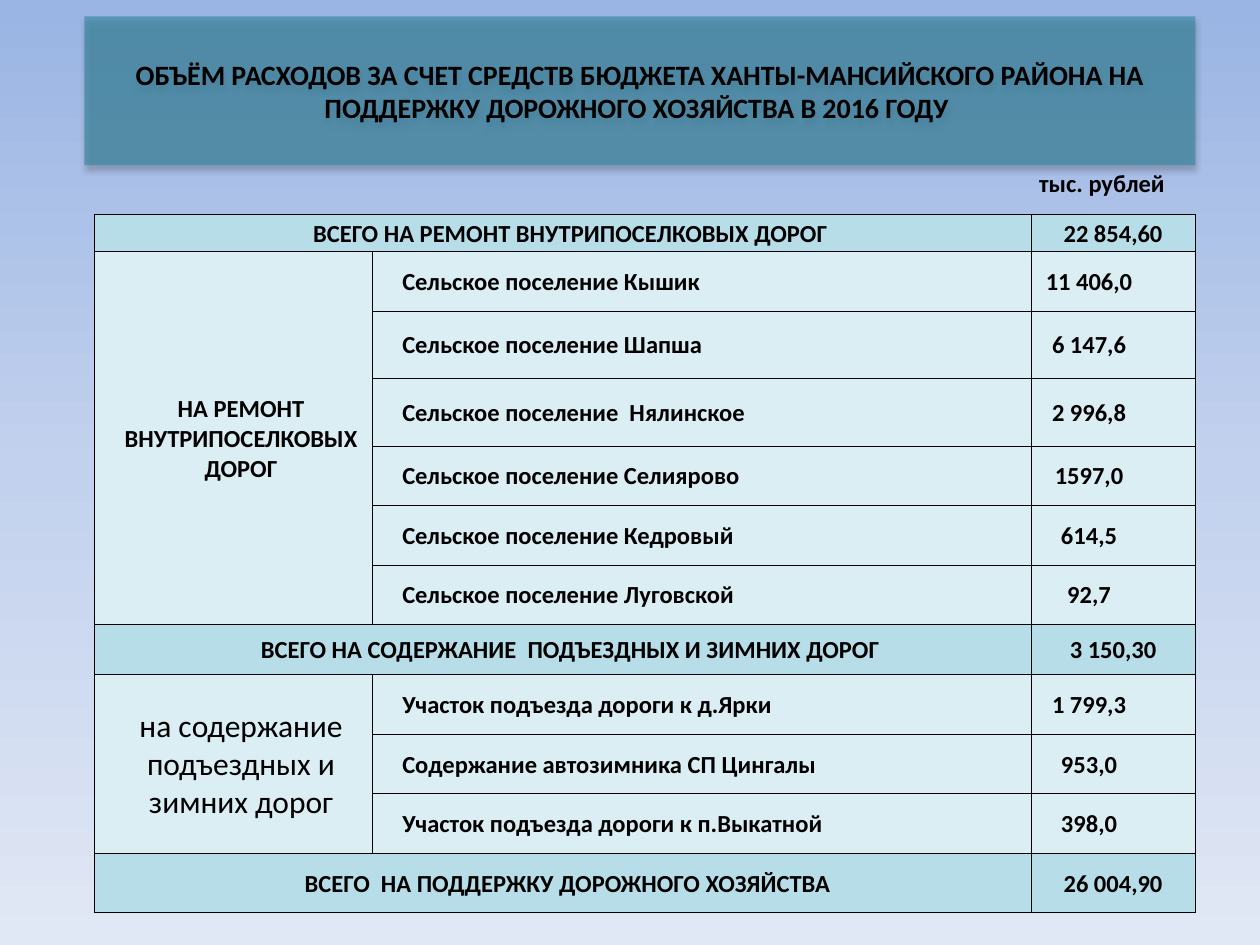
from copy import deepcopy

from lxml import etree
from pptx import Presentation
from pptx import util as u
from pptx.dml.color import RGBColor
from pptx.enum import shapes, text
from pptx.oxml.ns import qn

INK, TOTAL_FILL, ITEM_FILL = "000000", "B7DEE8", "DBEEF4"
COLUMN_WIDTHS = (5.6, 13.28, 3.3)
ROW_HEIGHTS = (0.75, 1.2, 1.36, 1.36, 1.2, 1.2, 1.2, 1.01, 1.2, 1.2, 1.2, 1.2)
LABEL_INSETS, TOTAL_INSETS, AMOUNT_INSETS = (0.6, 0.3), (0.03, 0.03), (0.03, 1)
SECTIONS = [
    ("ВСЕГО НА РЕМОНТ ВНУТРИПОСЕЛКОВЫХ ДОРОГ", "22 854,60",
     "НА РЕМОНТ ВНУТРИПОСЕЛКОВЫХ ДОРОГ", {}, [
         ("Сельское поселение Кышик", "11 406,0"),
         ("Сельское поселение Шапша", "6 147,6"),
         ("Сельское поселение  Нялинское", "2 996,8"),
         ("Сельское поселение Селиярово", "1597,0"),
         ("Сельское поселение Кедровый", "614,5"),
         ("Сельское поселение Луговской", "92,7")]),
    ("ВСЕГО НА СОДЕРЖАНИЕ  ПОДЪЕЗДНЫХ И ЗИМНИХ ДОРОГ", "3 150,30",
     "на содержание подъездных и зимних дорог", {"size": 18, "bold": False}, [
         ("Участок подъезда дороги к д.Ярки", "1 799,3"),
         ("Содержание автозимника СП Цингалы", "953,0"),
         ("Участок подъезда дороги к п.Выкатной", "398,0")]),
    ("ВСЕГО  НА ПОДДЕРЖКУ ДОРОЖНОГО ХОЗЯЙСТВА ", "26 004,90", None, {}, []),
]


def color(hex_code):
    return RGBColor.from_string(hex_code)


def write(frame, words, size=14, bold=True, align=text.PP_ALIGN.CENTER):
    paragraph = frame.paragraphs[0]
    paragraph.alignment = align
    run = paragraph.add_run()
    run.text = words
    run.font.name = "Calibri"
    run.font.size = u.Pt(size)
    run.font.bold = bold
    run.font.color.rgb = color(INK)


def paint_background(slide, stops):
    fill = slide.background.fill
    fill.gradient()
    fill.gradient_angle = 270
    stop_list = slide.background._cSld.find(".//" + qn("a:gsLst"))
    stop_list.append(deepcopy(stop_list[0]))
    for stop, (position, hex_code) in zip(fill.gradient_stops, stops):
        stop.position = position
        stop.color.rgb = color(hex_code)


def set_alpha(color_node, percent):
    etree.SubElement(color_node, qn("a:alpha"), val=str(percent * 1000))


def add_banner(slide, words):
    banner = slide.shapes.add_shape(
        shapes.MSO_SHAPE.RECTANGLE, u.Cm(1.7), u.Cm(0.33), u.Cm(22.4), u.Cm(3))
    banner.shadow.inherit = False
    banner.fill.solid()
    banner.fill.fore_color.rgb = color("31859C")
    banner.line.fill.background()
    properties = banner._element.spPr
    set_alpha(properties.find(qn("a:solidFill"))[0], 60)
    shadow = etree.SubElement(
        properties.find(qn("a:effectLst")), qn("a:outerShdw"),
        blurRad=str(u.Pt(3.5)), dist=str(u.Pt(2.2)), dir="5400000", rotWithShape="0")
    set_alpha(etree.SubElement(shadow, qn("a:srgbClr"), val=INK), 32)
    banner.text_frame.word_wrap = True
    banner.text_frame.vertical_anchor = text.MSO_ANCHOR.MIDDLE
    write(banner.text_frame, words, size=16)


def add_unit_note(slide, words):
    note = slide.shapes.add_textbox(u.Cm(20.7), u.Cm(3.27), u.Cm(3.4), u.Cm(0.86))
    note.text_frame.word_wrap = True
    write(note.text_frame, words, align=text.PP_ALIGN.LEFT)


def outline_cell(cell):
    properties = cell._tc.get_or_add_tcPr()
    for side in ("a:lnL", "a:lnR", "a:lnT", "a:lnB"):
        border = etree.SubElement(properties, qn(side), w=str(u.Pt(0.5)))
        ink = etree.SubElement(border, qn("a:solidFill"))
        etree.SubElement(ink, qn("a:srgbClr"), val=INK)


def fill_cell(cell, words, insets, background, **style):
    cell.margin_left, cell.margin_right = map(u.Cm, insets)
    cell.margin_top, cell.margin_bottom = u.Cm(0.03), 0
    cell.vertical_anchor = text.MSO_ANCHOR.MIDDLE
    cell.fill.solid()
    cell.fill.fore_color.rgb = color(background)
    write(cell.text_frame, words, **style)


def add_expense_table(slide):
    frame = slide.shapes.add_table(
        len(ROW_HEIGHTS), len(COLUMN_WIDTHS), u.Cm(1.91), u.Cm(4.32),
        u.Cm(sum(COLUMN_WIDTHS)), u.Cm(sum(ROW_HEIGHTS)))
    expenses = frame.table
    expenses.first_row = expenses.horz_banding = False
    for column, width in zip(expenses.columns, COLUMN_WIDTHS):
        column.width = u.Cm(width)
    for row, height in zip(expenses.rows, ROW_HEIGHTS):
        row.height = u.Cm(height)
    for cell in expenses.iter_cells():
        outline_cell(cell)

    row = 0
    for total, total_amount, group, group_style, items in SECTIONS:
        expenses.cell(row, 0).merge(expenses.cell(row, 1))
        fill_cell(expenses.cell(row, 0), total, LABEL_INSETS, TOTAL_FILL)
        fill_cell(expenses.cell(row, 2), total_amount, TOTAL_INSETS, TOTAL_FILL)
        row += 1
        if items:
            expenses.cell(row, 0).merge(expenses.cell(row + len(items) - 1, 0))
            fill_cell(expenses.cell(row, 0), group, LABEL_INSETS, ITEM_FILL, **group_style)
        for item, amount in items:
            fill_cell(expenses.cell(row, 1), item, LABEL_INSETS, ITEM_FILL,
                      align=text.PP_ALIGN.LEFT)
            fill_cell(expenses.cell(row, 2), amount, AMOUNT_INSETS, ITEM_FILL)
            row += 1


def main():
    deck = Presentation()
    deck.slide_width, deck.slide_height = u.Cm(25.4), u.Cm(19.05)
    slide = deck.slides.add_slide(deck.slide_layouts[6])
    paint_background(slide, [(0, "9AB5E4"), (0.5, "C2D1ED"), (1, "E1E8F5")])
    add_expense_table(slide)
    add_banner(slide, "ОБЪЁМ РАСХОДОВ ЗА СЧЕТ СРЕДСТВ БЮДЖЕТА ХАНТЫ-МАНСИЙСКОГО РАЙОНА "
                      "НА ПОДДЕРЖКУ ДОРОЖНОГО ХОЗЯЙСТВА В 2016 ГОДУ ")
    add_unit_note(slide, "тыс. рублей")
    deck.save("out.pptx")


if __name__ == "__main__":
    main()
